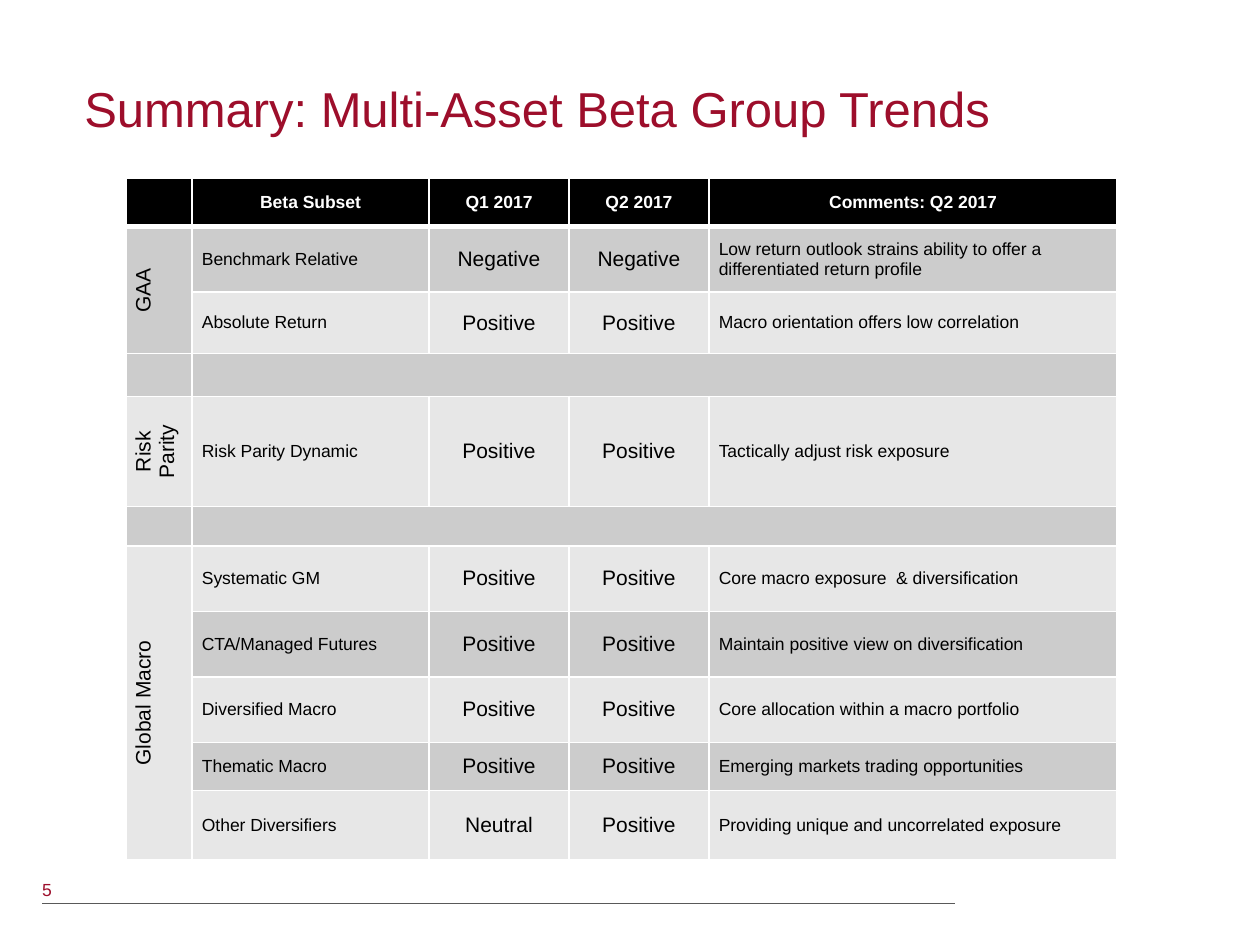
from typing import NamedTuple

from lxml import etree
from pptx import Presentation
from pptx import util as u
from pptx.dml.color import RGBColor
from pptx.enum import shapes, text
from pptx.oxml import ns

RED = RGBColor(0x9D, 0x0E, 0x2B)
BLACK = RGBColor(0, 0, 0)
WHITE = RGBColor(0xFF, 0xFF, 0xFF)
GREY = RGBColor(0x59, 0x59, 0x59)
DARK = RGBColor(0xCC, 0xCC, 0xCC)
LIGHT = RGBColor(0xE7, 0xE7, 0xE7)
FONT = "Arial"
LEFT, MID = text.PP_ALIGN.LEFT, text.PP_ALIGN.CENTER


class Beta(NamedTuple):
    high: float
    group: str = ""
    subset: str = ""
    first: str = ""
    second: str = ""
    note: str = ""


class Col(NamedTuple):
    wide: float
    size: int
    align: text.PP_ALIGN


COLS = [
    Col(1.32, 12, MID),
    Col(4.78, 10, LEFT),
    Col(2.82, 12, MID),
    Col(2.82, 12, MID),
    Col(8.23, 10, LEFT),
]

BETAS = [
    Beta(0.97, "", "Beta Subset", "Q1 2017", "Q2 2017", "Comments: Q2 2017"),
    Beta(1.32, "GAA", "Benchmark Relative", "Negative", "Negative",
         "Low return outlook strains ability to offer a differentiated return profile"),
    Beta(1.24, "", "Absolute Return", "Positive", "Positive",
         "Macro orientation offers low correlation"),
    Beta(0.86),
    Beta(2.01, "Risk Parity", "Risk Parity Dynamic", "Positive", "Positive",
         "Tactically adjust risk exposure"),
    Beta(0.79),
    Beta(1.32, "Global Macro", "Systematic GM", "Positive", "Positive",
         "Core macro exposure  & diversification"),
    Beta(1.32, "", "CTA/Managed Futures", "Positive", "Positive",
         "Maintain positive view on diversification"),
    Beta(1.32, "", "Diversified Macro", "Positive", "Positive",
         "Core allocation within a macro portfolio"),
    Beta(0.97, "", "Thematic Macro", "Positive", "Positive",
         "Emerging markets trading opportunities"),
    Beta(1.4, "", "Other Diversifiers", "Neutral", "Positive",
         "Providing unique and uncorrelated exposure"),
]

SPANS = [((1, 0), (2, 0)), ((3, 1), (3, 4)), ((5, 1), (5, 4)), ((6, 0), (10, 0))]


def write(frame, words: str, *, size: float, color: RGBColor = BLACK,
          bold: bool = False, align: text.PP_ALIGN = LEFT) -> None:
    para = frame.paragraphs[0]
    para.alignment = align
    if not words:
        end = etree.SubElement(para._p, ns.qn("a:endParaRPr"))
        end.set("sz", str(int(size * 100)))
        return
    run = para.add_run()
    run.text = words
    font = run.font
    font.name, font.size, font.bold = FONT, u.Pt(size), bold
    font.color.rgb = color


def label(slide, words: str, box: tuple, anchor: text.MSO_ANCHOR, size: float) -> None:
    frame = slide.shapes.add_textbox(*map(u.Cm, box)).text_frame
    frame.word_wrap = True
    frame.vertical_anchor = anchor
    frame.margin_left = frame.margin_right = 0
    frame.margin_top = frame.margin_bottom = 0
    write(frame, words, size=size, color=RED)


def border(cell, base: float) -> None:
    props = cell._tc.get_or_add_tcPr()
    for side, width in zip("LRTB", (1, 1, 1, base)):
        line = etree.SubElement(props, ns.qn(f"a:ln{side}"), w=str(u.Pt(width)))
        fill = etree.SubElement(line, ns.qn("a:solidFill"))
        etree.SubElement(fill, ns.qn("a:srgbClr"), val=str(WHITE))


def paint(cell, words: str, row: int, col: int) -> None:
    head = row == 0
    border(cell, 3 if head else 1)
    cell.fill.solid()
    cell.fill.fore_color.rgb = BLACK if head else DARK if row % 2 else LIGHT
    cell.vertical_anchor = text.MSO_ANCHOR.MIDDLE
    cell.margin_left = cell.margin_right = u.Cm(0.2)
    cell.margin_top = cell.margin_bottom = u.Cm(0.1)
    if col == 0 and words:
        cell._tc.get_or_add_tcPr().set("vert", "vert270")
    write(cell.text_frame, words, size=10 if head or not words else COLS[col].size,
          color=WHITE if head else BLACK, bold=head,
          align=MID if head else COLS[col].align)


def grid(slide) -> None:
    wide = sum(col.wide for col in COLS)
    high = sum(beta.high for beta in BETAS)
    table = slide.shapes.add_table(
        len(BETAS), len(COLS), u.Cm(2.55), u.Cm(3.6), u.Cm(wide), u.Cm(high)).table
    for index, col in enumerate(COLS):
        table.columns[index].width = u.Cm(col.wide)
    for row, beta in enumerate(BETAS):
        table.rows[row].height = u.Cm(beta.high)
        for col, words in enumerate(beta[1:]):
            paint(table.cell(row, col), words, row, col)
    for start, end in SPANS:
        table.cell(*start).merge(table.cell(*end))


def rule(slide) -> None:
    line = slide.shapes.add_connector(
        shapes.MSO_CONNECTOR.STRAIGHT, u.Cm(19.25), u.Cm(18.21), u.Cm(0.85), u.Cm(18.21))
    line.line.color.rgb = GREY
    line.line.width = u.Pt(0.75)
    etree.SubElement(line._element.spPr, ns.qn("a:effectLst"))


def main() -> None:
    deck = Presentation()
    deck.slide_width, deck.slide_height = u.Cm(25.4), u.Cm(19.05)
    slide = deck.slides.add_slide(deck.slide_layouts[6])
    rule(slide)
    label(slide, "Summary: Multi-Asset Beta Group Trends",
          (1.7, 0.43, 22.43, 2.34), text.MSO_ANCHOR.BOTTOM, 28)
    label(slide, "5", (0.85, 17.73, 2.34, 0.84), text.MSO_ANCHOR.TOP, 10)
    grid(slide)
    deck.save("out.pptx")


if __name__ == "__main__":
    main()
